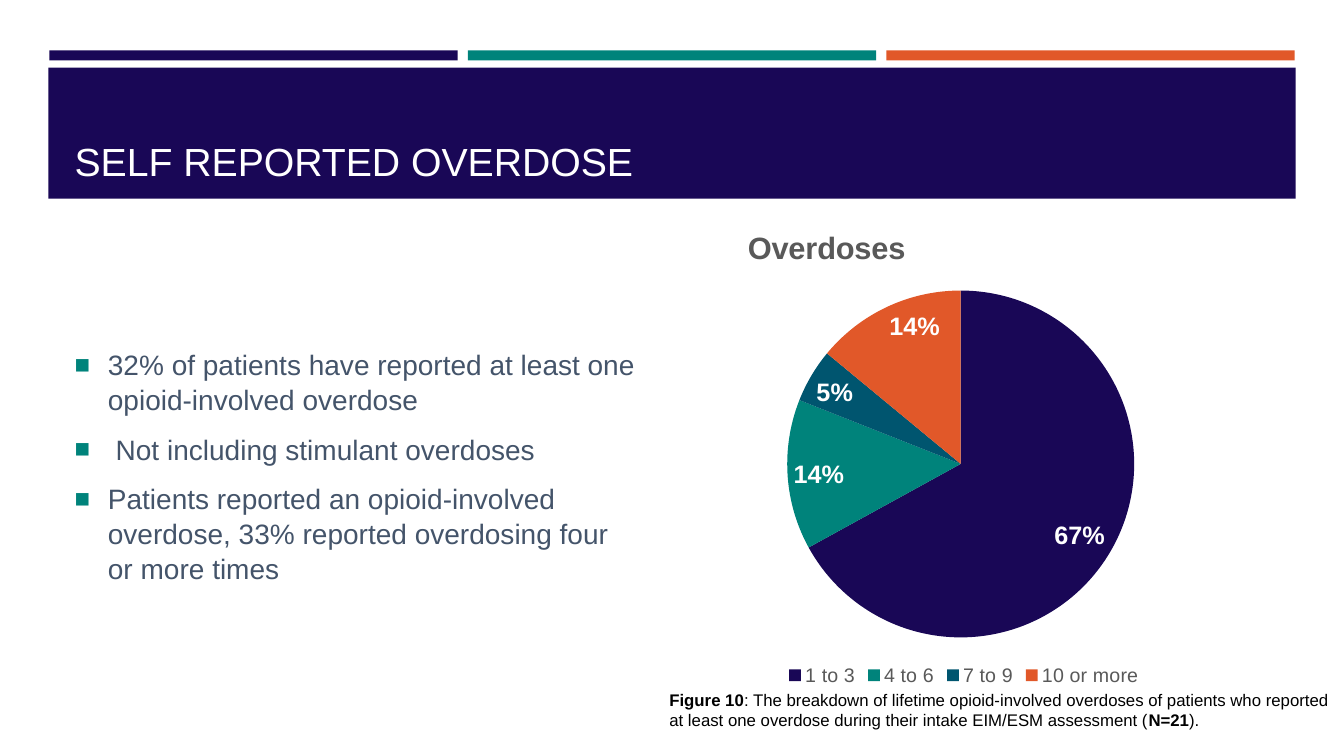
from lxml import etree
from pptx import Presentation
from pptx.chart.data import CategoryChartData
from pptx.dml.color import RGBColor
from pptx.enum.chart import XL_CHART_TYPE as ChartType
from pptx.enum.chart import XL_LABEL_POSITION as LabelPosition
from pptx.enum.chart import XL_LEGEND_POSITION as LegendPosition
from pptx.enum.shapes import MSO_SHAPE as Shape
from pptx.enum.text import MSO_ANCHOR as Anchor
from pptx.enum.text import MSO_AUTO_SIZE as AutoSize
from pptx.enum.text import PP_ALIGN as Align
from pptx.oxml import parse_xml
from pptx.oxml.ns import nsdecls, qn
from pptx.util import Inches, Pt

NAVY = RGBColor(0x19, 0x07, 0x56)
TEAL = RGBColor(0x00, 0x83, 0x7B)
BLUE = RGBColor(0x00, 0x55, 0x6F)
ORANGE = RGBColor(0xE1, 0x58, 0x29)
SLATE = RGBColor(0x44, 0x54, 0x6A)
GRAY = RGBColor(0x59, 0x59, 0x59)
WHITE = RGBColor(0xFF, 0xFF, 0xFF)
BLACK = RGBColor(0x00, 0x00, 0x00)
FONT = "Arial"

FINDINGS = [
    "32% of patients have reported at least one opioid-involved overdose",
    " Not including stimulant overdoses",
    "Patients reported an opioid-involved overdose, 33% reported overdosing four or more times",
]
# Category, share in percent, slice colour
OVERDOSES = [
    ("1 to 3", 67, NAVY),
    ("4 to 6", 14, TEAL),
    ("7 to 9", 5, BLUE),
    ("10 or more", 14, ORANGE),
]
# Text, bold
CAPTION = [
    ("Figure 10", True),
    (": The breakdown of lifetime opioid-involved overdoses of patients who reported "
     "at least one overdose during their intake EIM/ESM assessment (", False),
    ("N=21", True),
    (").", False),
]


def style_font(font, size, color, bold=False):
    font.name = FONT
    font.size = Pt(size)
    font.color.rgb = color
    font.bold = bold


def add_run(paragraph, text, size, color, bold=False):
    run = paragraph.add_run()
    run.text = text
    style_font(run.font, size, color, bold)


def place(shape, left, top, width, height):
    shape.left, shape.top = Inches(left), Inches(top)
    shape.width, shape.height = Inches(width), Inches(height)


def prepare_frame(shape, anchor):
    frame = shape.text_frame
    frame.word_wrap = True
    frame.auto_size = AutoSize.NONE
    frame.vertical_anchor = anchor
    return frame


def add_band(slide, left, top, width, height, color):
    band = slide.shapes.add_shape(
        Shape.RECTANGLE, Inches(left), Inches(top), Inches(width), Inches(height))
    band.shadow.inherit = False
    band.fill.solid()
    band.fill.fore_color.rgb = color
    band.line.fill.background()


def add_square_bullet(paragraph):
    props = paragraph._p.get_or_add_pPr()
    props.set("marL", str(Inches(0.33)))
    props.set("indent", str(-Inches(0.33)))
    color = etree.SubElement(props, qn("a:buClr"))
    etree.SubElement(color, qn("a:srgbClr"), val=str(TEAL))
    etree.SubElement(props, qn("a:buSzPct"), val="92000")
    etree.SubElement(props, qn("a:buFont"), typeface=FONT)
    etree.SubElement(props, qn("a:buChar"), char="■")


def fill_title(title):
    place(title, 0.64, 0.77, 12.06, 1.11)
    heading = prepare_frame(title, Anchor.BOTTOM).paragraphs[0]
    heading.alignment = Align.LEFT
    add_run(heading, "SELF REPORTED OVERDOSE", 28, WHITE)


def fill_findings(body):
    place(body, 0.64, 2.23, 5.78, 4.78)
    frame = prepare_frame(body, Anchor.MIDDLE)
    for index, finding in enumerate(FINDINGS):
        paragraph = frame.add_paragraph() if index else frame.paragraphs[0]
        paragraph.line_spacing = 1.05
        paragraph.space_before = Pt(4)
        paragraph.space_after = Pt(6)
        add_square_bullet(paragraph)
        add_run(paragraph, finding, 20, SLATE)


def set_chart_layout(parent, position, **fractions):
    """Fix the place of a chart part as fractions of the chart's size."""
    for old in parent.findall(qn("c:layout")):
        parent.remove(old)
    layout = parse_xml(f"<c:layout {nsdecls('c')}/>")
    manual = etree.SubElement(layout, qn("c:manualLayout"))
    if "w" in fractions:
        etree.SubElement(manual, qn("c:layoutTarget"), val="inner")
    for mode in ("xMode", "yMode"):
        etree.SubElement(manual, qn(f"c:{mode}"), val="edge")
    for key, value in fractions.items():
        etree.SubElement(manual, qn(f"c:{key}"), val=str(value))
    parent.insert(position, layout)


def add_overdose_pie(slide):
    data = CategoryChartData()
    data.categories = [category for category, _, _ in OVERDOSES]
    data.add_series("Series 1", [share for _, share, _ in OVERDOSES])
    chart = slide.shapes.add_chart(
        ChartType.PIE, Inches(6.42), Inches(2.07), Inches(6.28), Inches(4.78), data).chart
    style_font(chart.font, 10, BLACK)

    # Title, left of the pie's centre
    chart.has_title = True
    heading = chart.chart_title.text_frame.paragraphs[0]
    add_run(heading, "Overdoses", 22, GRAY, True)
    set_chart_layout(chart.chart_title._element, 1, x=0.15, y=0.03)

    # Slices and their percentages
    pie = chart.plots[0]
    pie.vary_by_categories = True
    for index, (_, _, color) in enumerate(OVERDOSES):
        fill = pie.series[0].points[index].format.fill
        fill.solid()
        fill.fore_color.rgb = color
    labels = pie.series[0].data_labels
    labels.show_percentage = True
    labels.show_value = False
    labels.number_format = "0%"
    labels.number_format_is_linked = False
    labels.position = LabelPosition.INSIDE_END
    style_font(labels.font, 18, WHITE, True)
    plot_area = chart._chartSpace.find(".//" + qn("c:plotArea"))
    set_chart_layout(plot_area, 0, x=0.22, y=0.17, w=0.55, h=0.72)

    # Legend
    chart.has_legend = True
    chart.legend.position = LegendPosition.BOTTOM
    chart.legend.include_in_layout = False
    style_font(chart.legend.font, 14, GRAY)


def add_caption(slide):
    caption = slide.shapes.add_textbox(
        Inches(6.54), Inches(6.79), Inches(6.79), Inches(0.91))
    paragraph = prepare_frame(caption, Anchor.TOP).paragraphs[0]
    for text, bold in CAPTION:
        add_run(paragraph, text, 12, BLACK, bold)


def main():
    deck = Presentation()
    deck.slide_width, deck.slide_height = Inches(13.33), Inches(7.5)
    slide = deck.slides.add_slide(deck.slide_layouts[1])
    title, body = slide.placeholders

    # Header bands
    for column, color in enumerate((NAVY, TEAL, ORANGE)):
        add_band(slide, 0.49 + column * 4.15, 0.5, 4.05, 0.1, color)
    add_band(slide, 0.48, 0.67, 12.37, 1.3, NAVY)

    # Title and findings go in front of the bands
    for placeholder in (title, body):
        slide.shapes._spTree.append(placeholder._element)
    fill_title(title)
    fill_findings(body)

    add_overdose_pie(slide)
    add_caption(slide)
    deck.save("out.pptx")


if __name__ == "__main__":
    main()
